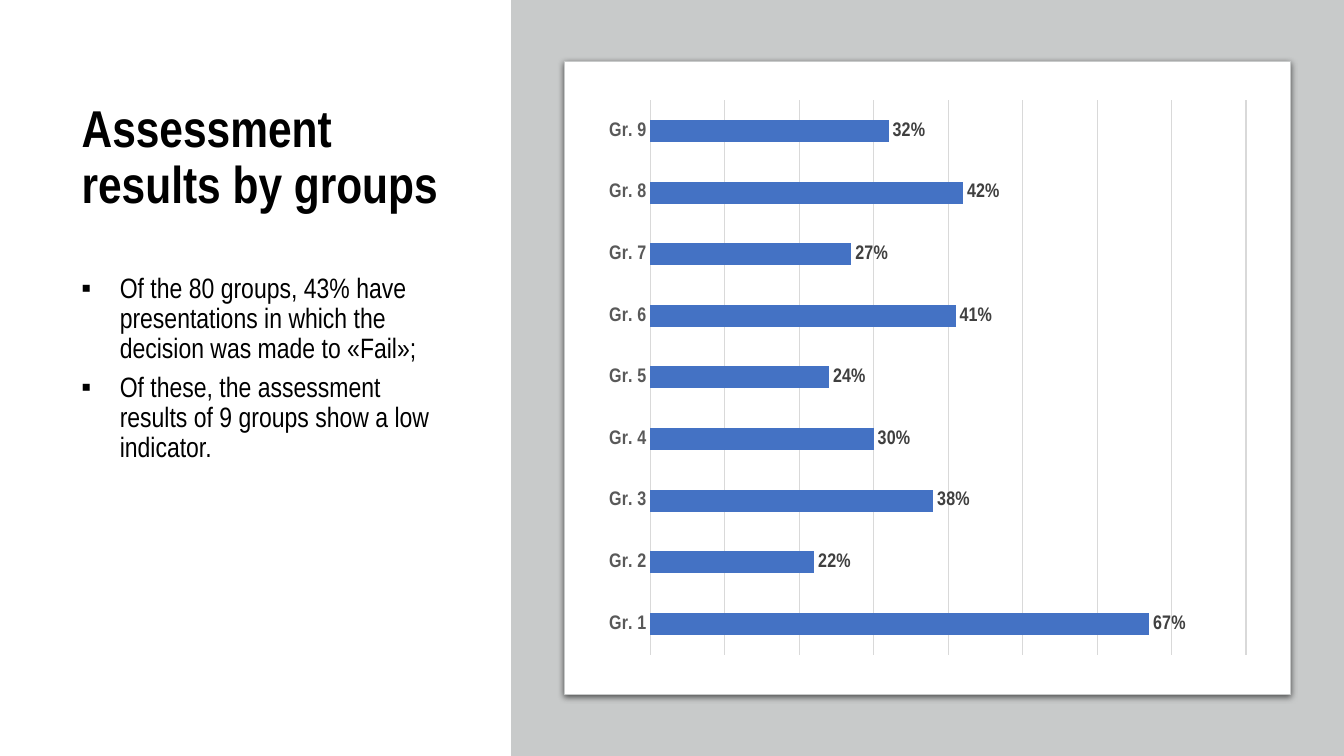
from lxml import etree
from pptx import Presentation
from pptx.chart.data import CategoryChartData
from pptx.dml.color import RGBColor
from pptx.enum import chart as charts, shapes, text
from pptx.oxml import ns
from pptx.util import Inches, Pt

TITLE = "Assessment results by groups"
POINTS = [
    "Of the 80 groups, 43% have presentations in which the decision was made to «Fail»;",
    "Of these, the assessment results of 9 groups show a low indicator.",
]
RESULTS = [0.67, 0.22, 0.38, 0.30, 0.24, 0.41, 0.27, 0.42, 0.32]
GROUPS = [f"Gr. {number}" for number in range(1, len(RESULTS) + 1)]
FONT = "Arial Narrow"
TITLE_AREA = (0.71, 0.69, 3.83, 1.77)
POINTS_AREA = (0.71, 2.67, 3.83, 4.14)
PANEL_AREA = (5.07, 0, 8.26, 7.5)
CARD_AREA = (5.6, 0.61, 7.2, 6.28)
CHART_AREA = (5.91, 0.88, 6.58, 5.73)
GREY = "C8CACA"
RULE = "D9D9D9"


def color(value):
    return RGBColor.from_string(value)


def inches(area):
    return [Inches(length) for length in area]


def style(font, size, value, bold=False, name=FONT):
    font.name = name
    font.size = Pt(size)
    font.bold = bold
    font.color.rgb = color(value)


def rule(line):
    line.color.rgb = color(RULE)
    line.width = Pt(0.75)


def add_run(para, words, size, bold=False):
    para.line_spacing = 0.9
    span = para.add_run()
    span.text = words
    style(span.font, size, "000000", bold)


def add_bullet(para):
    props = para._p.get_or_add_pPr()
    props.set("marL", str(Inches(0.38)))
    props.set("indent", str(-Inches(0.38)))
    etree.SubElement(props, ns.qn("a:buFont")).set("typeface", "Arial")
    etree.SubElement(props, ns.qn("a:buChar")).set("char", "▪")


def add_block(page, kind, area, fill):
    block = page.shapes.add_shape(kind, *inches(area))
    block.shadow.inherit = False
    block.fill.solid()
    block.fill.fore_color.rgb = color(fill)
    block.line.fill.background()
    return block


def add_shadow(block):
    effects = block._element.spPr.find(ns.qn("a:effectLst"))
    shadow = etree.SubElement(
        effects, ns.qn("a:outerShdw"), blurRad=str(Pt(4.5)), dist=str(Pt(1.5)),
        dir="5400000", algn="t", rotWithShape="0")
    tint = etree.SubElement(shadow, ns.qn("a:srgbClr"), val="000000")
    etree.SubElement(tint, ns.qn("a:alpha"), val="63000")


def add_text(page):
    title = page.shapes.title
    title.left, title.top, title.width, title.height = inches(TITLE_AREA)
    frame = title.text_frame
    frame.auto_size = text.MSO_AUTO_SIZE.NONE
    frame.vertical_anchor = text.MSO_ANCHOR.MIDDLE
    frame.paragraphs[0].alignment = text.PP_ALIGN.LEFT
    add_run(frame.paragraphs[0], TITLE, 37, True)

    frame = page.shapes.add_textbox(*inches(POINTS_AREA)).text_frame
    frame.word_wrap = True
    for index, words in enumerate(POINTS):
        para = frame.add_paragraph() if index else frame.paragraphs[0]
        para.space_after = Pt(6)
        add_run(para, words, 20)
        add_bullet(para)


def add_results_chart(page):
    data = CategoryChartData(number_format="0%")
    data.categories = GROUPS
    data.add_series("Series 1", RESULTS)
    chart = page.shapes.add_chart(
        charts.XL_CHART_TYPE.BAR_CLUSTERED, *inches(CHART_AREA), data).chart
    style(chart.font, 10, "000000", name="Calibri")
    chart.has_legend = False
    chart.has_title = False

    groups = chart.category_axis
    groups.major_tick_mark = charts.XL_TICK_MARK.NONE
    style(groups.tick_labels.font, 14, "595959", True)
    rule(groups.format.line)

    scale = chart.value_axis
    scale.minimum_scale, scale.maximum_scale, scale.major_unit = 0, 0.8, 0.1
    scale.tick_labels.number_format = "0%"
    scale.tick_labels.number_format_is_linked = False
    rule(scale.major_gridlines.format.line)
    scale.visible = False

    plot = chart.plots[0]
    plot.gap_width = 182
    plot.vary_by_categories = False
    bars = plot.series[0]
    bars.format.fill.solid()
    bars.format.fill.fore_color.rgb = color("4472C4")
    labels = bars.data_labels
    labels.show_value = True
    labels.number_format = "0%"
    labels.number_format_is_linked = False
    labels.position = charts.XL_LABEL_POSITION.OUTSIDE_END
    style(labels.font, 14, "404040", True)


def main():
    deck = Presentation()
    deck.slide_width, deck.slide_height = Inches(13.33), Inches(7.5)
    page = deck.slides.add_slide(deck.slide_layouts[5])
    add_text(page)
    add_block(page, shapes.MSO_SHAPE.RECTANGLE, PANEL_AREA, GREY)
    card = add_block(page, shapes.MSO_SHAPE.ROUNDED_RECTANGLE, CARD_AREA, "FFFFFF")
    card.adjustments[0] = 0
    card.line.color.rgb = color(GREY)
    card.line.width = Pt(0.75)
    add_shadow(card)
    add_results_chart(page)
    deck.save("out.pptx")


if __name__ == "__main__":
    main()
